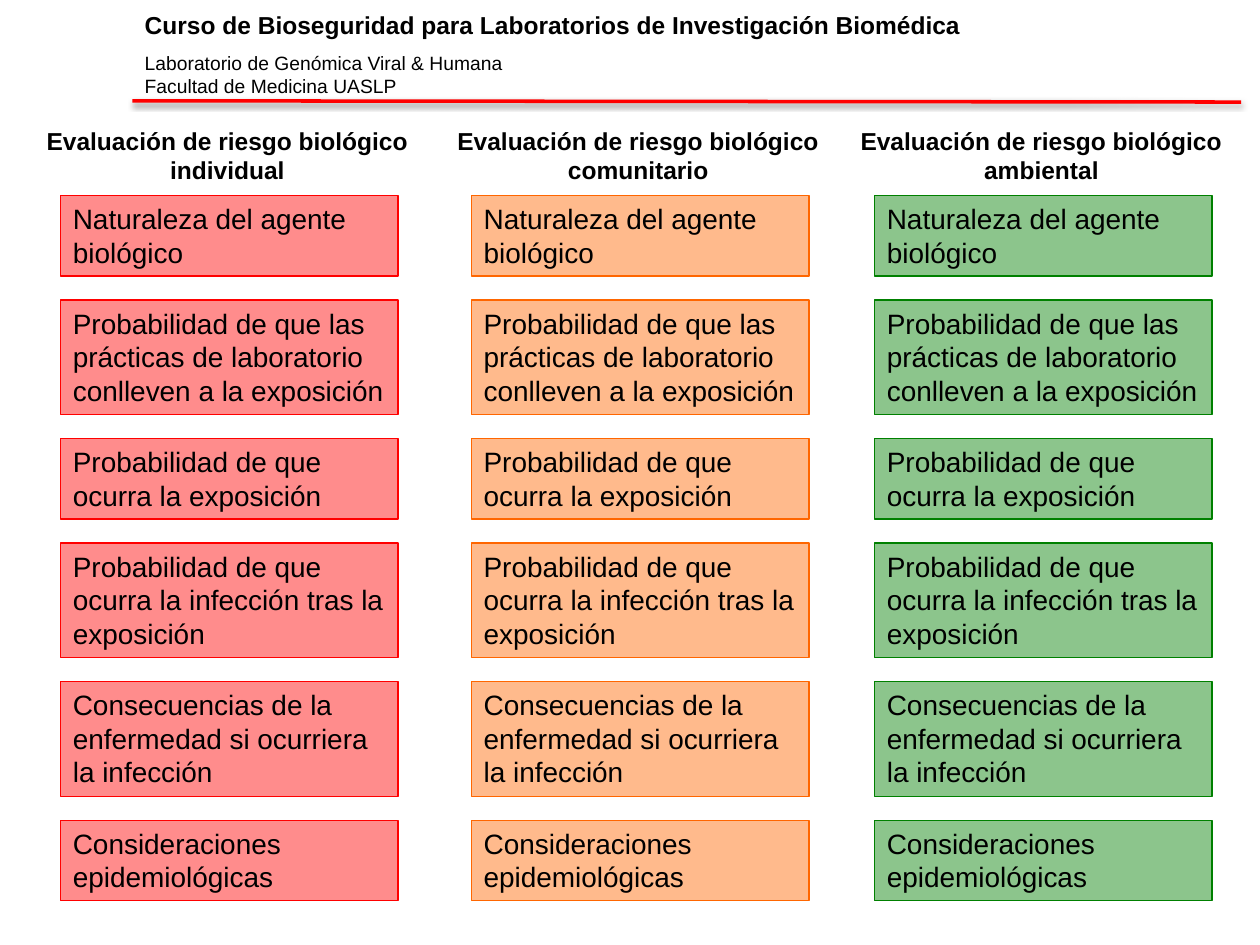
import pptx
import pptx.dml.color
import pptx.enum.shapes
import pptx.enum.text
import pptx.oxml
import pptx.oxml.ns
import pptx.util
from pptx.util import Inches, Pt

COURSE = "Curso de Bioseguridad para Laboratorios de Investigación Biomédica"
AFFILIATION = ["Laboratorio de Genómica Viral & Humana", "Facultad de Medicina UASLP"]
HEADING = "Evaluación de riesgo biológico"
# scope, colour, left edge of the boxes
COLUMNS = [
    ("individual", "FF0000", 0.48),
    ("comunitario", "FF6600", 3.74),
    ("ambiental", "008000", 6.94),
]
# factor, number of text lines
FACTORS = [
    ("Naturaleza del agente biológico", 2),
    ("Probabilidad de que las prácticas de laboratorio conlleven a la exposición", 3),
    ("Probabilidad de que ocurra la exposición", 2),
    ("Probabilidad de que ocurra la infección tras la exposición", 3),
    ("Consecuencias de la enfermedad si ocurriera la infección", 3),
    ("Consideraciones epidemiológicas", 2),
]
THEME = {
    "font": "Arial", "text": "000000", "rule": "FF0000", "opacity": 45,
    "title": 14, "affiliation": 11, "heading": 14, "factor": 16,
}
BOX_WIDTH, BOX_TOP, BOX_GAP = 2.68, 1.55, 0.19
BOX_HEIGHTS = {2: 0.64, 3: 0.91}
HEADING_WIDTH, HEADING_OFFSET = 3.09, -0.22


def color(value):
    return pptx.dml.color.RGBColor.from_string(value)


def write(frame, lines, align=pptx.enum.text.PP_ALIGN.LEFT, wrap=True):
    """Fill a text frame with (text, size, bold, space before) paragraphs."""
    frame.word_wrap = wrap
    frame.vertical_anchor = pptx.enum.text.MSO_ANCHOR.TOP
    for index, (text, size, bold, space) in enumerate(lines):
        paragraph = frame.add_paragraph() if index else frame.paragraphs[0]
        paragraph.alignment = align
        if space:
            paragraph.space_before = Pt(space)
        run = paragraph.add_run()
        run.text = text
        run.font.name = THEME["font"]
        run.font.size = Pt(size)
        run.font.bold = bold
        run.font.color.rgb = color(THEME["text"])


def add_header(slide):
    box = slide.shapes.add_textbox(Inches(1.05), Inches(0.03), Inches(6.92), Inches(0.77))
    lines = [(COURSE, THEME["title"], True, 0)]
    for index, text in enumerate(AFFILIATION):
        lines.append((text, THEME["affiliation"], False, 0 if index else 7))
    write(box.text_frame, lines)

    rule = slide.shapes.add_connector(
        pptx.enum.shapes.MSO_CONNECTOR.STRAIGHT,
        Inches(1.05), Inches(0.8), Inches(9.85), Inches(0.81))
    rule.line.color.rgb = color(THEME["rule"])
    rule.line.width = Pt(2)
    rule._element.spPr.append(pptx.oxml.parse_xml(
        f'<a:effectLst {pptx.oxml.ns.nsdecls("a")}>'
        f'<a:outerShdw blurRad="{Pt(3.1)}" dist="{Pt(1.6)}" dir="5400000" rotWithShape="0">'
        '<a:srgbClr val="000000"><a:alpha val="38000"/></a:srgbClr>'
        '</a:outerShdw></a:effectLst>'))


def add_factor(slide, text, left, top, height, fill):
    shape = slide.shapes.add_shape(
        pptx.enum.shapes.MSO_SHAPE.RECTANGLE,
        Inches(left), Inches(top), Inches(BOX_WIDTH), Inches(height))
    shape.shadow.inherit = False
    shape.fill.solid()
    shape.fill.fore_color.rgb = color(fill)
    solid = shape._element.spPr.find(pptx.oxml.ns.qn("a:solidFill"))
    solid[0].append(pptx.oxml.parse_xml(
        f'<a:alpha {pptx.oxml.ns.nsdecls("a")} val="{THEME["opacity"] * 1000}"/>'))
    shape.line.color.rgb = color(fill)
    shape.line.width = Pt(0.75)
    write(shape.text_frame, [(text, THEME["factor"], False, 0)])


def add_column(slide, scope, fill, left):
    heading = slide.shapes.add_textbox(
        Inches(left + HEADING_OFFSET), Inches(0.95), Inches(HEADING_WIDTH), Inches(0.57))
    write(heading.text_frame,
          [(text, THEME["heading"], True, 0) for text in (HEADING, scope)],
          pptx.enum.text.PP_ALIGN.CENTER, wrap=False)
    top = BOX_TOP
    for text, line_count in FACTORS:
        height = BOX_HEIGHTS[line_count]
        add_factor(slide, text, left, top, height, fill)
        top += height + BOX_GAP


def main():
    presentation = pptx.Presentation()
    presentation.slide_width = Inches(10)
    presentation.slide_height = Inches(7.5)
    slide = presentation.slides.add_slide(presentation.slide_layouts[6])
    add_header(slide)
    for scope, fill, left in COLUMNS:
        add_column(slide, scope, fill, left)
    presentation.save("out.pptx")


if __name__ == "__main__":
    main()
